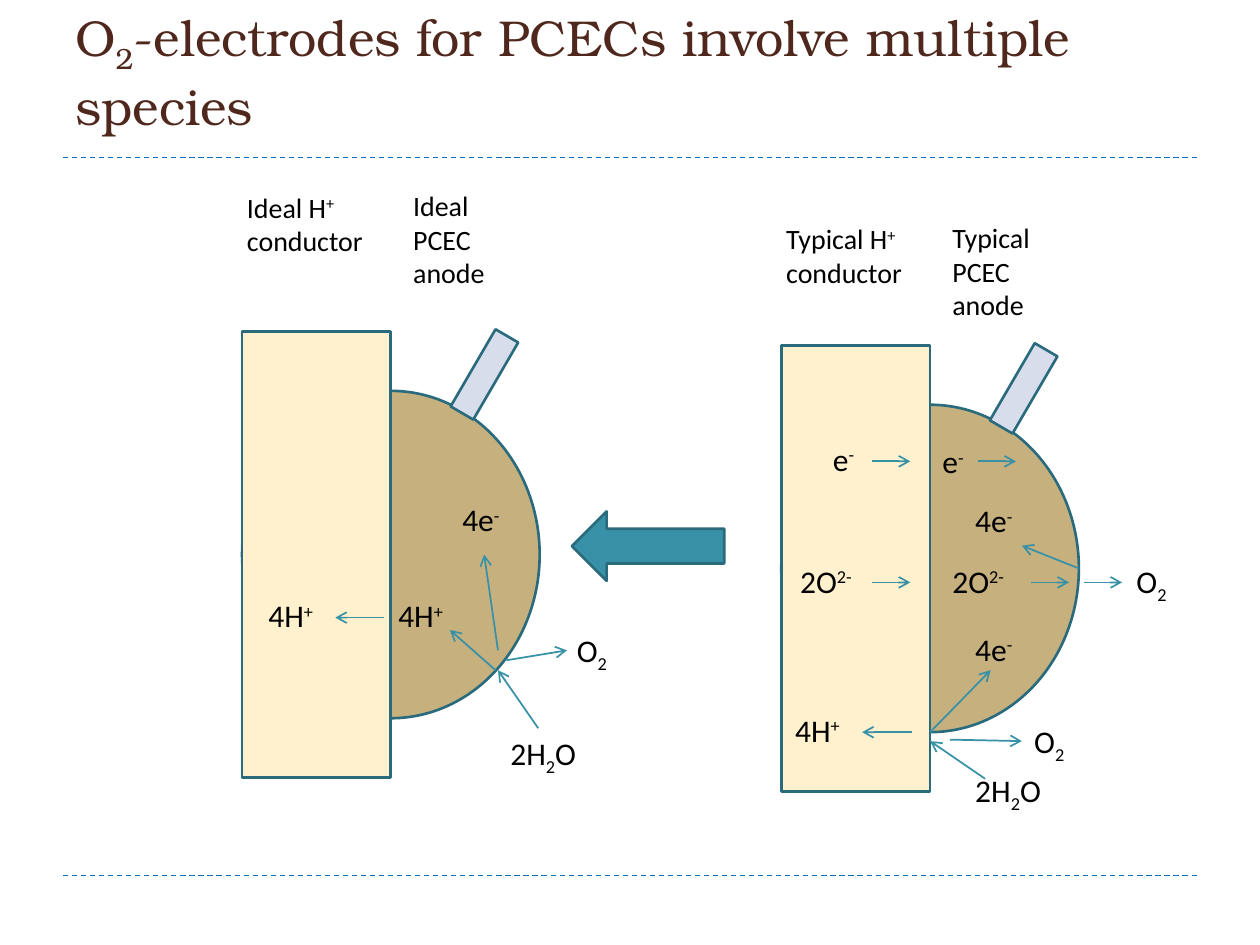
from pptx import Presentation
from pptx.dml.color import RGBColor
from pptx.enum.dml import MSO_LINE
from pptx.enum.shapes import MSO_CONNECTOR, MSO_SHAPE
from pptx.enum.text import MSO_ANCHOR, MSO_AUTO_SIZE, PP_ALIGN
from pptx.oxml.ns import qn
from pptx.util import Cm, Pt
from lxml import etree

TITLE = {"name": "TeX Gyre Bonum", "size": Pt(28.8)}
HEADING = {"name": "Calibri", "size": Pt(16)}
SPECIES = {"name": "Calibri", "size": Pt(18)}
BASELINE = {"^": "30000", "_": "-25000"}
WIDTHS = {"O|_2": 1.24, "4H|^+": 1.57, "4e|^-": 1.37, "2H|_2|O": 2.06, "2O|^2-": 1.75, "e|^-": 0.97}

IDEAL = {
    "headings": ("Ideal H|^+| conductor", ["Ideal", "PCEC anode"]),
    "heading_top": -3.0,
    "species": [
        ("O|_2", 6.5, 5.92), ("4H|^+", 2.9, 5.21), ("4e|^-", 4.19, 3.28),
        ("2H|_2|O", 5.16, 8), ("4H|^+", 0.28, 5.21),
    ],
    "arrows": [
        (5.33, 6.63, 6.55, 6.43), (5.16, 6.43, 4.88, 4.5), (5.11, 6.83, 4.19, 6.02),
        (5.97, 8, 5.16, 6.83), (2.87, 5.77, 1.88, 5.77),
    ],
}
TYPICAL = {
    "headings": ("Typical H|^+| conductor", ["Typical", "PCEC anode"]),
    "heading_top": -2.64,
    "species": [
        ("2H|_2|O", 3.66, 8.46), ("4H|^+", 0.03, 7.24), ("O|_2", 4.85, 7.47),
        ("4e|^-", 3.66, 5.61), ("4e|^-", 3.66, 3.02), ("2O|^2-", 3.2, 4.24),
        ("2O|^2-", 0.13, 4.24), ("O|_2", 6.91, 4.24), ("e|^-", 0.79, 1.78), ("e|^-", 3, 1.83),
    ],
    "arrows": [
        (2.64, 7.8, 1.63, 7.8), (3.4, 7.95, 4.85, 7.98), (3, 7.8, 4.22, 6.55),
        (4.11, 8.74, 3, 7.98), (6, 4.5, 4.85, 4.04),
    ] + [(x, y, x + 0.77, y) for x, y in
         [(1.83, 4.78), (5.03, 4.78), (6.1, 4.78), (1.83, 2.34), (3.96, 2.34)]],
}


def rgb(color):
    """Turn a hex string into a colour."""
    return RGBColor.from_string(color)


def apply(target, values):
    """Set each attribute named in a dict of format values."""
    for name, value in values.items():
        setattr(target, name, value)


def add_text(s, box, paragraphs, font, color="000000", **frame):
    """Add a text box; segments split by | may start with ^ or _ to shift them."""
    sp = s.shapes.add_textbox(*map(Cm, box))
    tf = sp.text_frame
    apply(tf, {"word_wrap": True, **frame})
    for i, text in enumerate(paragraphs):
        p = tf.paragraphs[0] if i == 0 else tf.add_paragraph()
        p.alignment = PP_ALIGN.LEFT
        for part in text.split("|"):
            r = p.add_run()
            r.text = part.lstrip("^_")
            apply(r.font, font)
            r.font.color.rgb = rgb(color)
            if part[0] in BASELINE:
                r.font._element.set("baseline", BASELINE[part[0]])


def add_shape(s, kind, box, fill, rotation=0):
    """Add an outlined preset shape."""
    sp = s.shapes.add_shape(kind, *map(Cm, box))
    sp.shadow.inherit = False
    sp.rotation = rotation
    sp.fill.solid()
    sp.fill.fore_color.rgb = rgb(fill)
    sp.line.color.rgb = rgb("296B7C")
    sp.line.width = Pt(1.5)


def add_line(s, ends, color, width):
    """Add a straight connector without shadow and return it."""
    c = s.shapes.add_connector(MSO_CONNECTOR.STRAIGHT, *map(Cm, ends))
    c.line.color.rgb = rgb(color)
    c.line.width = Pt(width)
    etree.SubElement(c._element.spPr, qn("a:effectLst"))
    return c


def add_arrow(s, ends):
    """Add a thin arrow showing how a species moves."""
    c = add_line(s, ends, "3891A7", 1)
    etree.SubElement(c.line._get_or_add_ln(), qn("a:tailEnd"), type="arrow")


def add_frame(s, left, top, width, height):
    """Add the title and the dashed rules above and below the content."""
    for y in (top + height, top):
        c = add_line(s, (left, y, left + width, y), "0070C0", 0.75)
        c.line.dash_style = MSO_LINE.DASH
    add_text(s, (left, 0, width, 2.74), ["O|_2|-electrodes for PCECs involve multiple species"],
             TITLE, "4F271C", vertical_anchor=MSO_ANCHOR.BOTTOM, margin_bottom=0)


def add_electrode(s, left, top, width, height, parts):
    """Draw a conductor slab with its anode, headings, species and arrows."""
    anode_height = 6.6
    anode_top = top + (height - anode_height) / 2
    add_shape(s, MSO_SHAPE.OVAL, (left, anode_top, 2 * width, anode_height), "C6B07E")
    add_shape(s, MSO_SHAPE.RECTANGLE, (left, top, width, height), "FFF1CE")
    add_shape(s, MSO_SHAPE.RECTANGLE, (left + 4.62, top - 0.03, 0.53, 1.8), "D7DDEB", 30.2)
    conductor, anode = parts["headings"]
    y = top + parts["heading_top"]
    add_text(s, (left - 0.15, y + 0.03, 3, 1.63), [conductor], HEADING)
    add_text(s, (left + 3.2, y, 3, 2.31), anode, HEADING)
    for text, dx, dy in parts["species"]:
        add_text(s, (left + dx, top + dy, WIDTHS[text], 1.02), [text], SPECIES,
                 word_wrap=False, auto_size=MSO_AUTO_SIZE.SHAPE_TO_FIT_TEXT)
    for x1, y1, x2, y2 in parts["arrows"]:
        add_arrow(s, (left + x1, top + y1, left + x2, top + y2))


def main():
    """Build the slide and save it."""
    prs = Presentation()
    apply(prs, {"slide_width": Cm(25.4), "slide_height": Cm(19.05)})
    s = prs.slides.add_slide(prs.slide_layouts[6])
    add_frame(s, 1.27, 3.18, 22.86, 14.47)
    add_electrode(s, 4.88, 6.68, 3, 9, IDEAL)
    add_electrode(s, 15.75, 6.96, 3, 9, TYPICAL)
    add_shape(s, MSO_SHAPE.LEFT_ARROW, (11.53, 10.31, 3.07, 1.4), "3891A7")
    prs.save("out.pptx")


if __name__ == "__main__":
    main()
